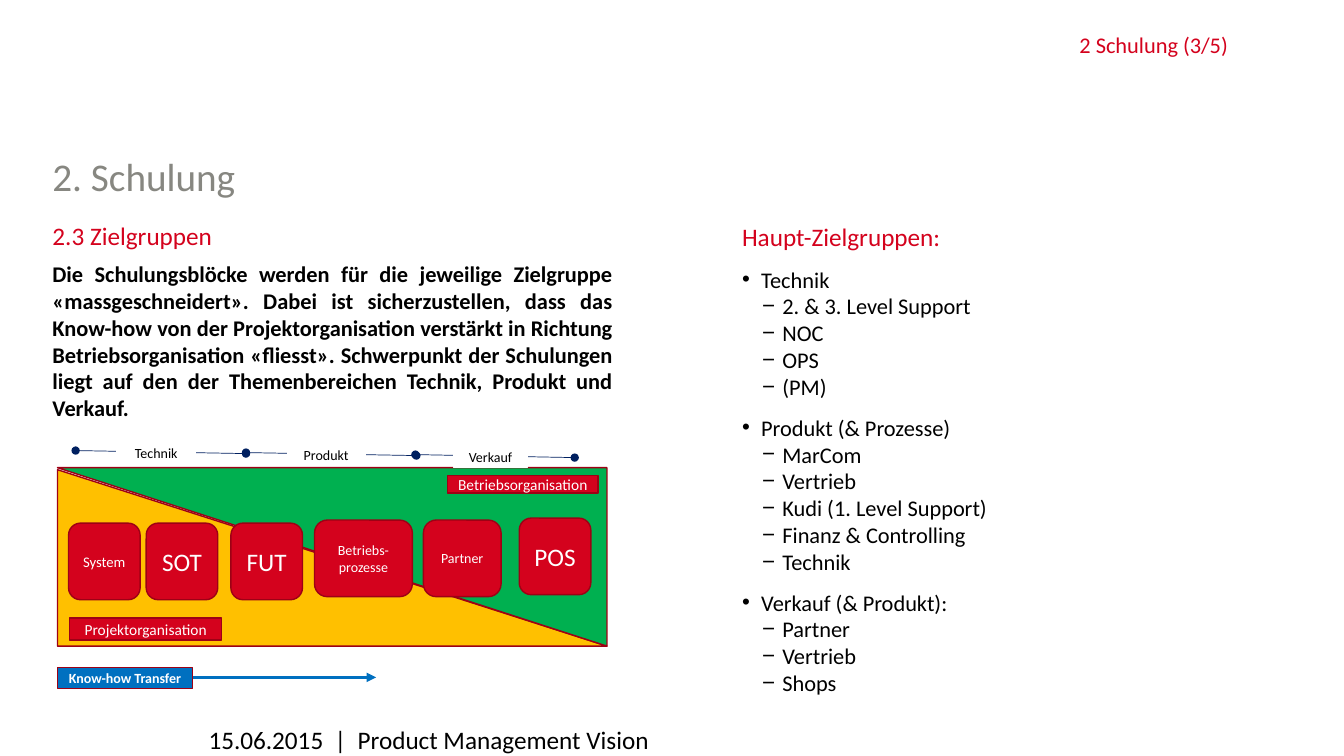
from lxml import etree
from pptx import Presentation
from pptx import util as u
from pptx.dml.color import RGBColor
from pptx.enum import shapes, text
from pptx.oxml.ns import qn

RED = RGBColor(0xD4, 0x02, 0x1D)
DARK_RED = RGBColor(0x9D, 0x01, 0x15)
GREY = RGBColor(0x87, 0x87, 0x81)
BLACK = RGBColor(0, 0, 0)
WHITE = RGBColor(0xFF, 0xFF, 0xFF)
YELLOW = RGBColor(0xFF, 0xC0, 0x00)
GREEN = RGBColor(0x00, 0xB0, 0x50)
NAVY = RGBColor(0x00, 0x20, 0x60)
BLUE = RGBColor(0x00, 0x70, 0xC0)

LEFT, CENTER = text.PP_ALIGN.LEFT, text.PP_ALIGN.CENTER
RIGHT, JUSTIFY = text.PP_ALIGN.RIGHT, text.PP_ALIGN.JUSTIFY
TOP, MIDDLE = text.MSO_ANCHOR.TOP, text.MSO_ANCHOR.MIDDLE
RECT, ROUNDED = shapes.MSO_SHAPE.RECTANGLE, shapes.MSO_SHAPE.ROUNDED_RECTANGLE
TRIANGLE = shapes.MSO_SHAPE.RIGHT_TRIANGLE
EXACT = u.Pt(19.2)
BULLETS = {1: ("•", 0.19, -0.19), 2: ("−", 0.4, -0.2)}

INTRO = (
    "Die Schulungsblöcke werden für die jeweilige Zielgruppe «massgeschneidert». "
    "Dabei ist sicherzustellen, dass das Know-how von der Projektorganisation verstärkt "
    "in Richtung Betriebsorganisation «fliesst». Schwerpunkt der Schulungen liegt auf den "
    "der Themenbereichen Technik, Produkt und Verkauf."
)
GROUPS = {
    "Technik": ["2. & 3. Level Support", "NOC", "OPS", "(PM)"],
    "Produkt (& Prozesse)": [
        "MarCom", "Vertrieb", "Kudi (1. Level Support)", "Finanz & Controlling", "Technik"],
    "Verkauf (& Produkt):": ["Partner", "Vertrieb", "Shops"],
}
STATIONS = [
    ("POS", 5.15, 5.14, 0.71, 18),
    ("Partner", 4.2, 5.16, 0.77, 10),
    ("System", 0.68, 5.19, 0.71, 10.5),
    ("FUT", 2.29, 5.19, 0.71, 18),
    ("SOT", 1.45, 5.19, 0.71, 18),
    ("Betriebs-prozesse", 3.12, 5.16, 0.97, 10),
]
PHASES = [
    ("Technik", 0.75, 4.47, 1.69, 1.16, 0.78),
    ("Produkt", 2.44, 4.49, 1.69, 2.85, 0.77),
    ("Verkauf", 4.12, 4.51, 1.58, 4.5, 0.73),
]


class SlideBuilder:
    """Hold the text style and the current slide and add its elements."""

    def __init__(self, page, font="Calibri"):
        self.page = page
        self.font = font

    def place(self, box, at):
        for name, value in zip(("left", "top", "width", "height"), at):
            setattr(box, name, u.Inches(value))

    def frame(self, box, anchor=TOP, side=0.0):
        frame = box.text_frame
        values = {
            "word_wrap": True, "auto_size": text.MSO_AUTO_SIZE.NONE, "vertical_anchor": anchor,
            "margin_left": u.Inches(side), "margin_right": u.Inches(side),
            "margin_top": 0, "margin_bottom": 0,
        }
        for name, value in values.items():
            setattr(frame, name, value)
        return frame

    def fill_para(self, para, words, size, color, bold=False, level=0, align=LEFT,
                  spacing=None, before=0):
        mark, margin, indent = BULLETS.get(level, (None, 0, 0))
        props = para._p.get_or_add_pPr()
        props.set("marL", str(u.Inches(margin)))
        props.set("indent", str(u.Inches(indent)))
        if mark:
            etree.SubElement(props, qn("a:buChar")).set("char", mark)
        else:
            etree.SubElement(props, qn("a:buNone"))
        layout = {"alignment": align, "line_spacing": spacing,
                  "space_before": u.Pt(before), "space_after": u.Pt(0)}
        for name, value in layout.items():
            setattr(para, name, value)
        if level:
            para.level = level - 1
        span = para.add_run()
        span.text = words
        for name, value in {"name": self.font, "size": u.Pt(size), "bold": bold}.items():
            setattr(span.font, name, value)
        span.font.color.rgb = color

    def placeholder(self, index, at, words, size, color, anchor=TOP, **style):
        box = self.page.placeholders[index]
        self.place(box, at)
        frame = self.frame(box, anchor)
        self.fill_para(frame.paragraphs[0], words, size, color, **style)
        return frame

    def text_box(self, at, words, size, color):
        box = self.page.shapes.add_textbox(*map(u.Inches, at))
        frame = self.frame(box, side=0.1)
        frame.margin_top = u.Inches(0.05)
        self.fill_para(frame.paragraphs[0], words, size, color)

    def shape(self, kind, at, fill, line=DARK_RED, words="", size=10, color=WHITE,
              bold=False, rotation=0):
        box = self.page.shapes.add_shape(kind, *map(u.Inches, at))
        box.shadow.inherit = False
        box.rotation = rotation
        box.fill.solid()
        box.fill.fore_color.rgb = fill
        box.line.color.rgb = line
        box.line.width = u.Pt(1)
        if words:
            para = self.frame(box, MIDDLE, 0.03).paragraphs[0]
            self.fill_para(para, words, size, color, bold=bold, align=CENTER)

    def line(self, start, end, color, width, **ends):
        link = self.page.shapes.add_connector(
            shapes.MSO_CONNECTOR.STRAIGHT, *map(u.Inches, start + end))
        link.line.color.rgb = color
        link.line.width = u.Pt(width)
        stroke = link.line._get_or_add_ln()
        for tag, kind in ends.items():
            etree.SubElement(stroke, qn(f"a:{tag}")).set("type", kind)
        etree.SubElement(link._element.spPr, qn("a:effectLst"))


def main():
    deck = Presentation()
    deck.slide_width, deck.slide_height = u.Inches(13.33), u.Inches(7.5)
    builder = SlideBuilder(deck.slides.add_slide(deck.slide_layouts[4]))

    builder.placeholder(0, (0.52, 1.54, 4.57, 0.47), "2. Schulung", 28, GREY,
                        anchor=MIDDLE, spacing=0.9)
    builder.text_box((1.97, 7.14, 7.53, 0.16),
                     "15.06.2015  |  Product Management Vision", 18, BLACK)
    builder.placeholder(1, (0.52, 2.22, 4.41, 0.39), "2.3 Zielgruppen", 18, RED, spacing=EXACT)
    builder.placeholder(3, (6.35, 0.31, 5.83, 0.24), "2 Schulung (3/5)", 16, RED,
                        align=RIGHT, spacing=EXACT)
    builder.placeholder(2, (0.52, 2.58, 5.56, 1.57), INTRO, 16, BLACK, bold=True,
                        align=JUSTIFY, spacing=EXACT)

    builder.shape(TRIANGLE, (0.57, 4.66, 5.45, 1.75), YELLOW)
    builder.shape(TRIANGLE, (0.57, 4.64, 5.45, 1.77), GREEN, rotation=180)
    builder.shape(RECT, (0.69, 6.13, 1.51, 0.22), RED, words="Projektorganisation", size=11)
    builder.shape(RECT, (4.44, 4.72, 1.49, 0.17), RED, words="Betriebsorganisation", size=11)
    for name, left, top, width, size in STATIONS:
        builder.shape(ROUNDED, (left, top, width, 0.76), RED, words=name, size=size)
    for name, start, top, length, left, width in PHASES:
        builder.line((start, top), (start + length, top + 0.03), NAVY, 0.5,
                     headEnd="oval", tailEnd="oval")
        builder.shape(RECT, (left, top - 0.08, width, 0.21), WHITE, line=WHITE,
                      words=name, color=BLACK)
    builder.line((0.66, 6.72), (3.73, 6.72), BLUE, 2.25, tailEnd="triangle")
    builder.shape(RECT, (0.57, 6.62, 1.34, 0.21), BLUE, words="Know-how Transfer", bold=True)

    targets = builder.placeholder(4, (7.36, 2.2, 5.67, 4.59), "Haupt-Zielgruppen:", 18, RED)
    for group, members in GROUPS.items():
        builder.fill_para(targets.add_paragraph(), group, 16, BLACK, level=1,
                          spacing=EXACT, before=9.8)
        for member in members:
            builder.fill_para(targets.add_paragraph(), member, 16, BLACK, level=2,
                              spacing=EXACT)

    deck.save("out.pptx")


if __name__ == "__main__":
    main()
